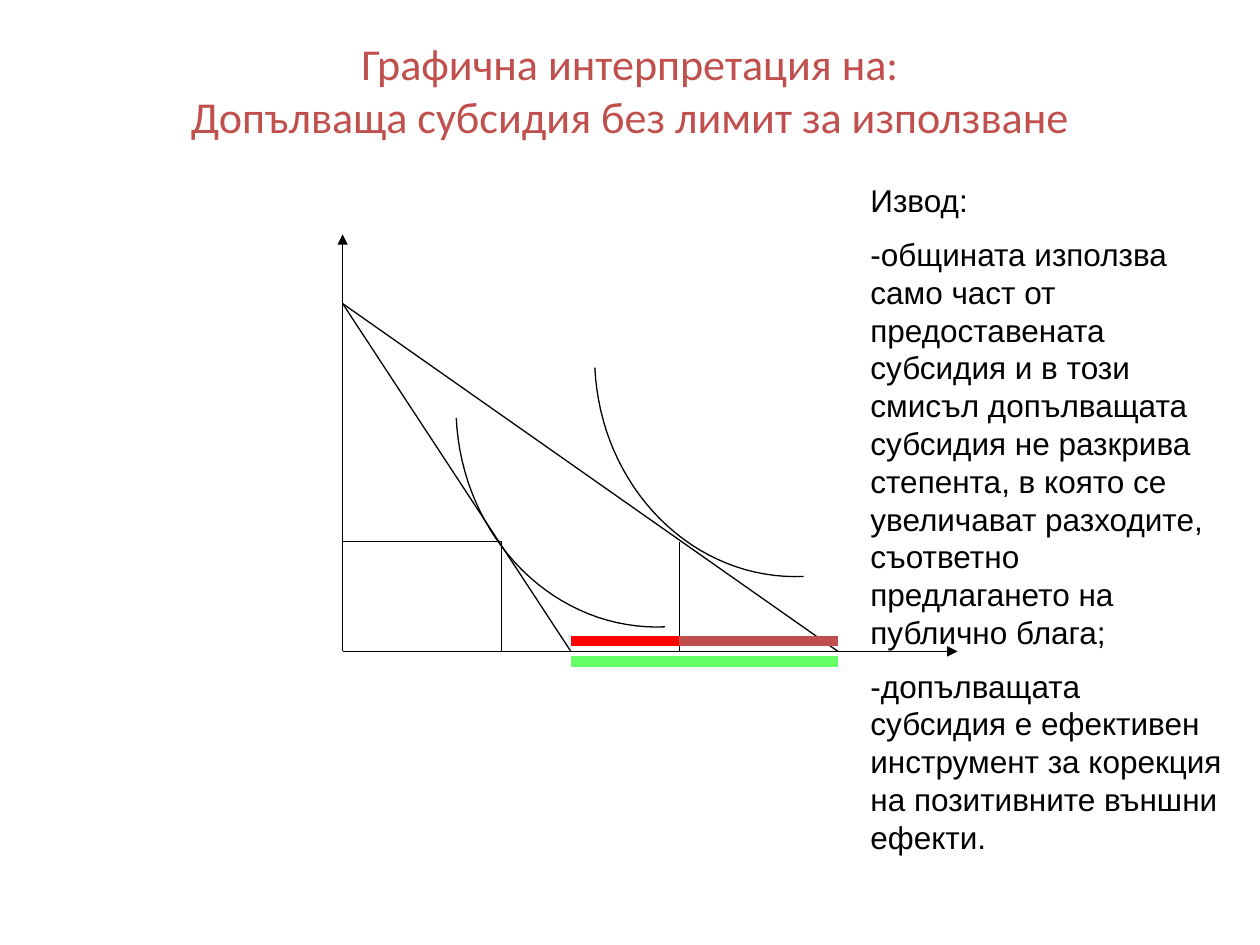
import math
from dataclasses import dataclass

from lxml import etree
from pptx import Presentation
from pptx import util as u
from pptx.dml.color import RGBColor
from pptx.enum import shapes, text
from pptx.oxml import ns

BLACK, BRICK, RED, GREEN = "000000", "C0504D", "FF0000", "66FF66"

ORIGIN_X, ORIGIN_Y = 195.8, 372.2
BUDGET_TOP = 173.5
CHOICE_Y = 309.6
OLD_CHOICE_X, NEW_CHOICE_X = 286.6, 388.1
OLD_LIMIT_X, NEW_LIMIT_X = 326.2, 478.8
BAR_OFFSET = 5.8
CURVE_WIDTH, CURVE_HEIGHT, CURVE_TILT = 113.8, 124.6, 177.4
CURVE_STEPS = 32

CONCLUSION = (
    "Извод:",
    "-общината използва само част от предоставената субсидия и в този смисъл "
    "допълващата субсидия не разкрива степента, в която се увеличават разходите, "
    "съответно предлагането на публично блага;",
    "-допълващата субсидия е ефективен инструмент за корекция на позитивните "
    "външни ефекти.",
)


@dataclass
class Segment:
    x1: float
    y1: float
    x2: float
    y2: float
    color: str = BLACK
    weight: float = 0.75
    arrow: bool = False


@dataclass
class Curve:
    left: float
    top: float


@dataclass
class Caption:
    left: float
    top: float
    width: float
    height: float
    paragraphs: tuple[str, ...]
    font: str
    size: float
    color: str
    align: text.PP_ALIGN = text.PP_ALIGN.LEFT
    anchor: text.MSO_ANCHOR = text.MSO_ANCHOR.TOP
    bottom_inset: float = 3.6
    space_before: float = 0


AXES_AND_BUDGETS = (
    Segment(ORIGIN_X, ORIGIN_Y, 547.2, ORIGIN_Y, arrow=True),
    Segment(ORIGIN_X, ORIGIN_Y, ORIGIN_X, 133.9, arrow=True),
    Segment(ORIGIN_X, BUDGET_TOP, OLD_LIMIT_X, ORIGIN_Y),
    Segment(ORIGIN_X, BUDGET_TOP, NEW_LIMIT_X, ORIGIN_Y),
)
INDIFFERENCE_CURVES = (Curve(342.7, 207.4), Curve(263.5, 236.2))
CHOICES = (
    Segment(ORIGIN_X, CHOICE_Y, OLD_CHOICE_X, CHOICE_Y),
    Segment(OLD_CHOICE_X, CHOICE_Y, OLD_CHOICE_X, ORIGIN_Y),
    Segment(NEW_CHOICE_X, CHOICE_Y, NEW_CHOICE_X, ORIGIN_Y),
)
ABOVE_AXIS, BELOW_AXIS = ORIGIN_Y - BAR_OFFSET, ORIGIN_Y + BAR_OFFSET
SUBSIDY_BARS = (
    Segment(OLD_LIMIT_X, BELOW_AXIS, NEW_LIMIT_X, BELOW_AXIS, GREEN, 6),
    Segment(OLD_LIMIT_X, ABOVE_AXIS, NEW_CHOICE_X, ABOVE_AXIS, RED, 6),
    Segment(NEW_CHOICE_X, ABOVE_AXIS, NEW_LIMIT_X, ABOVE_AXIS, BRICK, 6),
)
TITLE = Caption(
    36, 21.6, 648, 90,
    ("Графична интерпретация на:\vДопълваща субсидия без лимит за използване",),
    "Calibri", 25.2, BRICK, text.PP_ALIGN.CENTER, text.MSO_ANCHOR.MIDDLE,
    bottom_inset=34.3,
)
CONCLUSION_NOTE = Caption(
    490.3, 100.1, 215.3, 396.7, CONCLUSION, "Arial", 18, BLACK, space_before=9,
)


def paint(color_format, color: str) -> None:
    color_format.rgb = RGBColor.from_string(color)


def draw_segment(slide, segment: Segment) -> None:
    connector = slide.shapes.add_connector(
        shapes.MSO_CONNECTOR.STRAIGHT,
        u.Pt(segment.x1), u.Pt(segment.y1), u.Pt(segment.x2), u.Pt(segment.y2),
    )
    paint(connector.line.color, segment.color)
    connector.line.width = u.Pt(segment.weight)
    properties = connector.element.spPr
    if segment.arrow:
        etree.SubElement(properties.find(ns.qn("a:ln")), ns.qn("a:tailEnd"), type="triangle")
    etree.SubElement(properties, ns.qn("a:effectLst"))


def draw_curve(slide, curve: Curve) -> None:
    angles = [math.pi / 2 * step / CURVE_STEPS for step in range(CURVE_STEPS + 1)]
    points = [
        (u.Pt(curve.left + CURVE_WIDTH * math.sin(angle)),
         u.Pt(curve.top + CURVE_HEIGHT * (1 - math.cos(angle))))
        for angle in angles
    ]
    builder = slide.shapes.build_freeform(*points[0])
    builder.add_line_segments(points[1:], close=False)
    outline = builder.convert_to_shape()
    outline.rotation = CURVE_TILT
    outline.shadow.inherit = False
    outline.fill.background()
    paint(outline.line.color, BLACK)
    outline.line.width = u.Pt(0.75)


def draw_caption(slide, caption: Caption) -> None:
    box = slide.shapes.add_textbox(
        u.Pt(caption.left), u.Pt(caption.top), u.Pt(caption.width), u.Pt(caption.height)
    )
    frame = box.text_frame
    frame.word_wrap = True
    frame.vertical_anchor = caption.anchor
    frame.margin_bottom = u.Pt(caption.bottom_inset)
    frame.text = "\n".join(caption.paragraphs)
    for paragraph in frame.paragraphs:
        paragraph.alignment = caption.align
        paragraph.space_before = u.Pt(caption.space_before)
        for run in paragraph.runs:
            run.font.name = caption.font
            run.font.size = u.Pt(caption.size)
            paint(run.font.color, caption.color)


def main() -> None:
    deck = Presentation()
    deck.slide_width, deck.slide_height = u.Pt(720), u.Pt(540)
    slide = deck.slides.add_slide(deck.slide_layouts[6])
    draw_caption(slide, TITLE)
    for segment in AXES_AND_BUDGETS:
        draw_segment(slide, segment)
    for curve in INDIFFERENCE_CURVES:
        draw_curve(slide, curve)
    for segment in CHOICES:
        draw_segment(slide, segment)
    draw_caption(slide, CONCLUSION_NOTE)
    for segment in SUBSIDY_BARS:
        draw_segment(slide, segment)
    deck.save("out.pptx")


if __name__ == "__main__":
    main()
